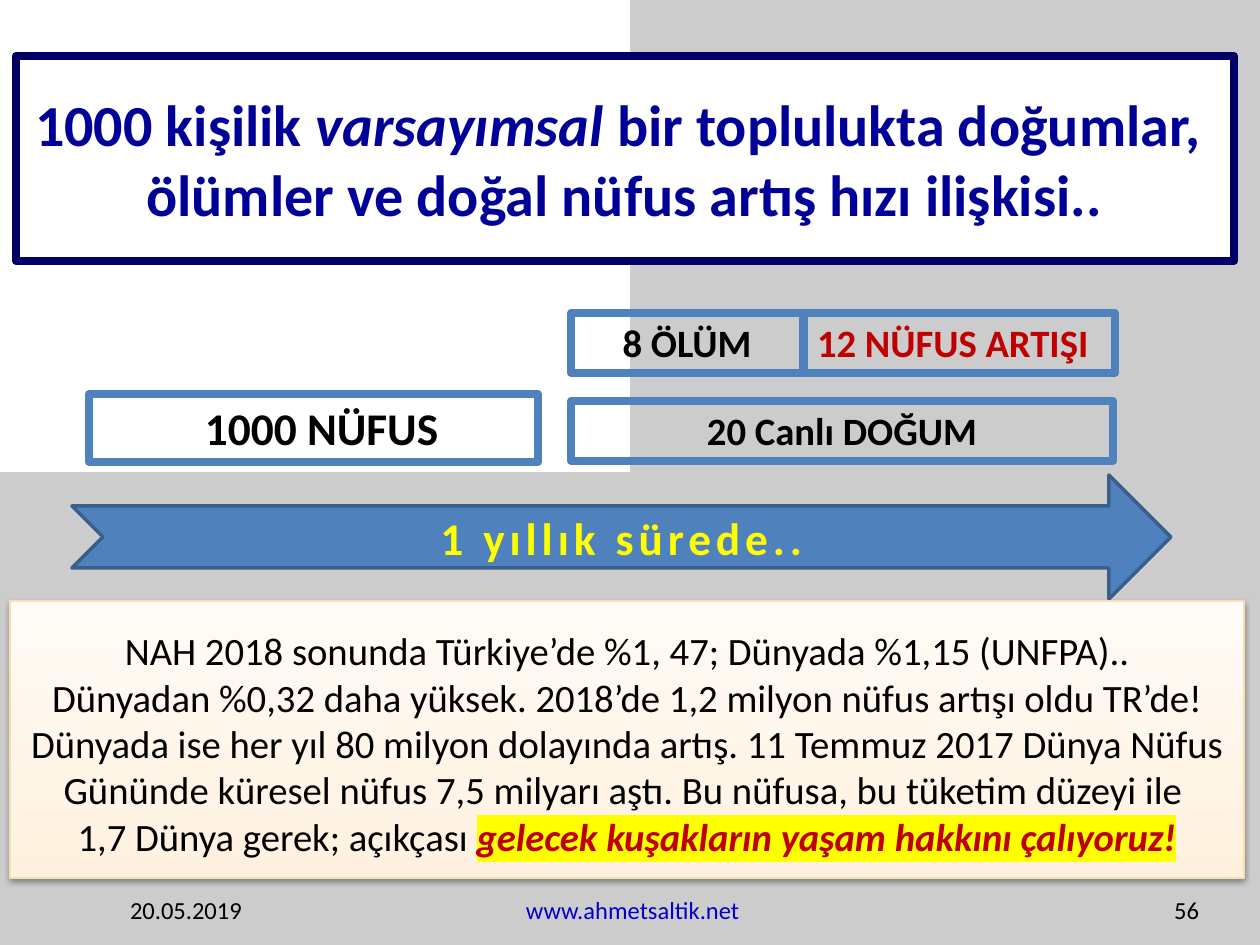
"""Build the slide on births, deaths and natural population growth."""
from dataclasses import dataclass
from typing import Optional

from lxml.etree import SubElement
from pptx import Presentation
from pptx.dml.color import RGBColor
from pptx.enum.shapes import MSO_SHAPE
from pptx.enum.text import MSO_ANCHOR, PP_ALIGN
from pptx.oxml.ns import qn
from pptx.util import Emu, Pt


@dataclass(frozen=True)
class Theme:
    font: str = "Calibri"
    white: str = "FFFFFF"
    grey: str = "CCCCCC"
    black: str = "000000"
    navy: str = "000066"
    ink: str = "000099"
    link: str = "0000CC"
    blue: str = "4F81BD"
    edge: str = "3A5F8C"
    red: str = "C00000"
    yellow: str = "FFFF00"
    cream: str = "FFF1DF"
    pale: str = "FFFBF6"
    sand: str = "FBDDB2"
    title: float = 33.2
    large: float = 25.9
    body: float = 22.1
    small: float = 14


@dataclass(frozen=True)
class Span:
    text: str
    size: float
    color: str = Theme.black
    bold: bool = False
    slant: bool = False
    mark: Optional[str] = None
    track: int = 0


@dataclass(frozen=True)
class Box:
    left: int
    top: int
    width: int
    height: int
    spans: tuple = ()
    fill: Optional[str] = None
    line: Optional[str] = None
    weight: float = 4.5
    kind: MSO_SHAPE = MSO_SHAPE.RECTANGLE
    align: PP_ALIGN = PP_ALIGN.CENTER
    anchor: MSO_ANCHOR = MSO_ANCHOR.TOP
    pad_left: int = 13
    pad_top: int = 6


T = Theme()
MID = MSO_ANCHOR.MIDDLE
LEFT, RIGHT = PP_ALIGN.LEFT, PP_ALIGN.RIGHT
WIDE, HIGH = 1260, 945
FOOT = 881


def px(count: int) -> Emu:
    return Emu(round(count * 914400 / 126))


def tint(code: str) -> RGBColor:
    return RGBColor.from_string(code)


def add_span(para, span: Span) -> None:
    for index, text in enumerate(span.text.split("\n")):
        if index:
            para.add_line_break()
        if not text:
            continue
        run = para.add_run()
        run.text = text
        font = run.font
        font.size, font.bold, font.italic = Pt(span.size), span.bold, span.slant
        font.color.rgb = tint(span.color)
        props = run._r.get_or_add_rPr()
        if span.track:
            props.set("spc", str(span.track))
        if span.mark:
            mark = SubElement(props, qn("a:highlight"))
            SubElement(mark, qn("a:srgbClr"), val=span.mark)
        font.name = T.font


def add_text(shape, box: Box) -> None:
    frame = shape.text_frame
    frame.word_wrap = True
    frame.vertical_anchor = box.anchor
    frame.margin_left, frame.margin_right = px(box.pad_left), px(13)
    frame.margin_top, frame.margin_bottom = px(box.pad_top), px(6)
    para = frame.paragraphs[0]
    para.alignment = box.align
    for span in box.spans:
        add_span(para, span)


def add_box(slide, box: Box):
    place = [px(n) for n in (box.left, box.top, box.width, box.height)]
    shape = slide.shapes.add_shape(box.kind, *place)
    shape.shadow.inherit = False
    if box.fill:
        shape.fill.solid()
        shape.fill.fore_color.rgb = tint(box.fill)
    else:
        shape.fill.background()
    if box.line:
        shape.line.color.rgb = tint(box.line)
        shape.line.width = Pt(box.weight)
    else:
        shape.line.fill.background()
    add_text(shape, box)
    return shape


def add_label(slide, box: Box) -> None:
    place = [px(n) for n in (box.left, box.top, box.width, box.height)]
    add_text(slide.shapes.add_textbox(*place), box)


def add_glow(shape) -> None:
    shape.fill.gradient()
    shape.fill.gradient_angle = 90
    for stop, code in zip(shape.fill.gradient_stops, (T.cream, T.pale)):
        stop.color.rgb = tint(code)
    first, last = shape.fill.gradient_stops
    first.position, last.position = 0, 1
    effect = shape._element.spPr.find(qn("a:effectLst"))
    shade = SubElement(effect, qn("a:outerShdw"), blurRad=str(Pt(3.1)),
                       dist=str(Pt(1.6)), dir="5400000", rotWithShape="0")
    color = SubElement(shade, qn("a:srgbClr"), val=T.black)
    SubElement(color, qn("a:alpha"), val="38000")


def fact(left: int, top: int, width: int, text: str, color: str = T.black,
         align: PP_ALIGN = PP_ALIGN.CENTER) -> Box:
    span = Span(text, T.body, color, bold=True)
    return Box(left, top, width, 60, (span,), line=T.blue, align=align)


def foot(left: int, width: int, text: str, align: PP_ALIGN,
         color: str = T.black) -> Box:
    return Box(left, FOOT, width, 58, (Span(text, T.small, color),),
               align=align, anchor=MID)


BOXES = (
    Box(0, 0, WIDE // 2, HIGH // 2, fill=T.white),
    Box(16, 56, 1218, 205, (
        Span("1000 kişilik ", T.title, T.ink, True),
        Span("varsayımsal", T.title, T.ink, True, True),
        Span(" bir toplulukta doğumlar, \n"
             "ölümler ve doğal nüfus artış hızı ilişkisi..",
             T.title, T.ink, True)),
        fill=T.white, line=T.navy, anchor=MID),
    Box(89, 394, 449, 68, (Span("1000 NÜFUS", T.large, bold=True),),
        line=T.blue, align=LEFT, pad_left=116),
    fact(571, 401, 542, "20 Canlı DOĞUM"),
    fact(571, 313, 232, "8 ÖLÜM"),
    fact(804, 313, 311, "12 NÜFUS ARTIŞI", T.red, LEFT),
    Box(72, 475, 1099, 124,
        (Span("1 yıllık sürede..", T.large, T.yellow, True, track=280),),
        fill=T.blue, line=T.edge, weight=2,
        kind=MSO_SHAPE.NOTCHED_RIGHT_ARROW, anchor=MID),
)
NOTE = Box(10, 601, 1234, 277, (
    Span("NAH 2018 sonunda Türkiye’de %1, 47; Dünyada %1,15 (UNFPA)..\n"
         "Dünyadan %0,32 daha yüksek. 2018’de 1,2 milyon nüfus artışı oldu TR’de!\n"
         "Dünyada ise her yıl 80 milyon dolayında artış. 11 Temmuz 2017 Dünya "
         "Nüfus Gününde küresel nüfus 7,5 milyarı aştı. Bu nüfusa, bu tüketim "
         "düzeyi ile \n1,7 Dünya gerek; açıkçası ", T.body),
    Span("gelecek kuşakların yaşam hakkını çalıyoruz!", T.body, T.red,
         True, True, T.yellow)),
    line=T.sand, weight=0.75, pad_top=26)
FEET = (
    foot(117, 246, "20.05.2019", LEFT),
    foot(436, 399, "www.ahmetsaltik.net ", PP_ALIGN.CENTER, T.link),
    foot(950, 262, "56", RIGHT),
)


def main() -> None:
    deck = Presentation()
    deck.slide_width, deck.slide_height = px(WIDE), px(HIGH)
    slide = deck.slides.add_slide(deck.slide_layouts[6])
    slide.background.fill.solid()
    slide.background.fill.fore_color.rgb = tint(T.grey)
    for box in BOXES:
        add_box(slide, box)
    add_glow(add_box(slide, NOTE))
    for box in FEET:
        add_label(slide, box)
    deck.save("out.pptx")


if __name__ == "__main__":
    main()
